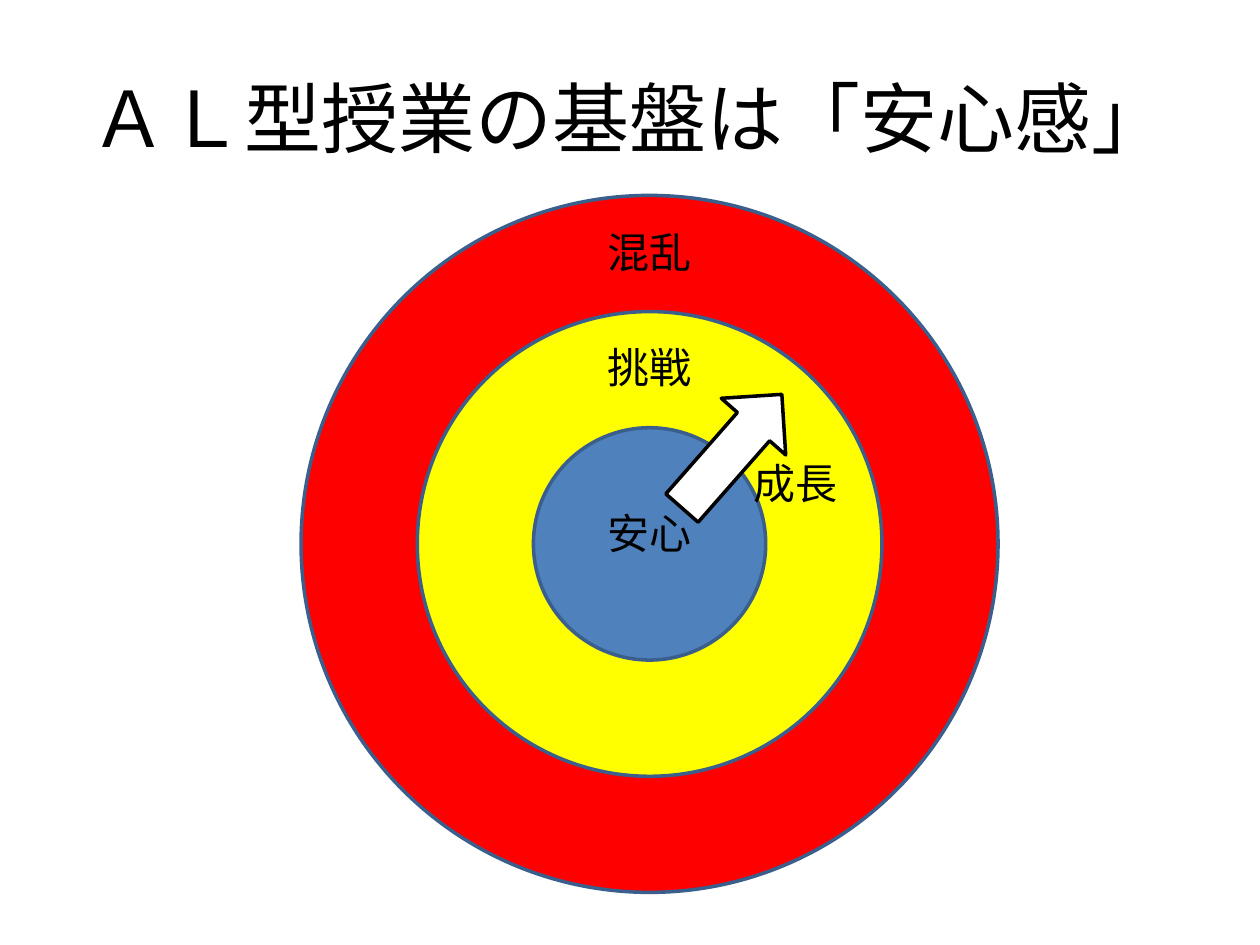
from dataclasses import dataclass

from lxml.etree import SubElement
from pptx import Presentation
from pptx.dml.color import RGBColor as Rgb
from pptx.enum.shapes import MSO_SHAPE as Kind
from pptx.enum.text import MSO_ANCHOR as Anchor, MSO_AUTO_SIZE as Fit, PP_ALIGN as Align
from pptx.oxml.ns import qn
from pptx.util import Cm, Pt


@dataclass(frozen=True)
class Theme:
    """Colours, fonts and type sizes of the slide."""
    ink: str = "000000"
    paper: str = "FFFFFF"
    edge: str = "3A5F8C"
    rings: tuple = ("FF0000", "FFFF00", "4F81BD")
    head: str = "Karla"
    body: str = "Noto Sans CJK JP"
    big: int = 44
    mid: int = 24
    line: int = 2


THEME = Theme()


def write(frame, text, font, size):
    """Set one centred line of text in the given font and size."""
    frame.text = text
    frame.word_wrap = True
    para = frame.paragraphs[0]
    para.alignment = Align.CENTER
    run = para.runs[0]
    run.font.name = font
    run.font.size = Pt(size)
    run.font.color.rgb = Rgb.from_string(THEME.ink)
    SubElement(run.font._element, qn("a:ea"), typeface=THEME.body)


def draw(group, kind, box, fill, edge):
    """Add a flat outlined shape; box is in centimetres."""
    shape = group.shapes.add_shape(kind, *map(Cm, box))
    shape.shadow.inherit = False
    shape.fill.solid()
    shape.fill.fore_color.rgb = Rgb.from_string(fill)
    shape.line.color.rgb = Rgb.from_string(edge)
    shape.line.width = Pt(THEME.line)
    return shape


def label(group, text, left, top):
    """Add a zone name at the given place."""
    box = group.shapes.add_textbox(Cm(left), Cm(top), Cm(3.76), Cm(1.28))
    write(box.text_frame, text, THEME.body, THEME.mid)
    box.text_frame.auto_size = Fit.SHAPE_TO_FIT_TEXT


def title(slide, text, left, top, wide, high):
    """Place and fill the title."""
    head = slide.shapes.title
    head.left, head.top, head.width, head.height = map(Cm, (left, top, wide, high))
    write(head.text_frame, text, THEME.head, THEME.big)
    head.text_frame.vertical_anchor = Anchor.MIDDLE


def target(slide, left, top, size):
    """Draw the nested zones, their names and the growth arrow."""
    group = slide.shapes.add_group_shape()
    step = size / 6
    for i, fill in enumerate(THEME.rings):
        side = size - 2 * step * i
        draw(group, Kind.OVAL, (left + step * i, top + step * i, side, side),
             fill, THEME.edge)
    mid = left + size / 2 - 1.88
    for text, down in (("安心", 6.17), ("挑戦", 2.82), ("混乱", 0.51)):
        label(group, text, mid, top + down)
    arrow = draw(group, Kind.DOWN_ARROW, (left + 7.82, top + 3.63, 1.73, 3.05),
                 THEME.paper, THEME.ink)
    arrow.rotation = 221.3
    label(group, "成長", left + 8.08, top + 5.16)


def main():
    """Build and save the slide."""
    deck = Presentation()
    deck.slide_width, deck.slide_height = Cm(25.4), Cm(19.05)
    slide = deck.slides.add_slide(deck.slide_layouts[5])
    title(slide, "ＡＬ型授業の基盤は「安心感」", 1.27, 0.76, 22.86, 3.18)
    target(slide, 6.07, 3.94, 14.05)
    deck.save("out.pptx")


if __name__ == "__main__":
    main()
